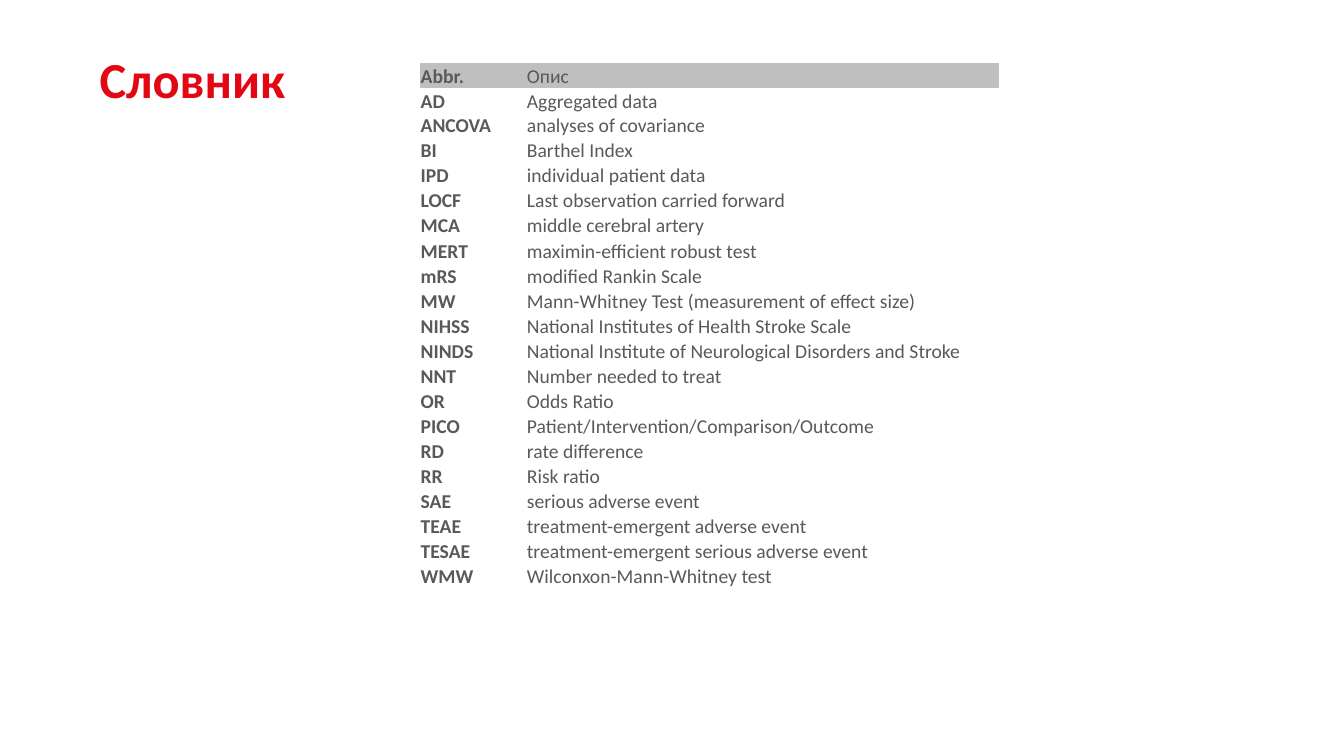
from pptx import Presentation
from pptx.dml.color import RGBColor
from pptx.enum.text import MSO_ANCHOR
from pptx.oxml.ns import qn
from pptx.util import Pt

MIDDLE, BOTTOM = MSO_ANCHOR.MIDDLE, MSO_ANCHOR.BOTTOM
COLORS = {"heading": "E30613", "body": "595959", "header": "BFBFBF"}
FONT = "Calibri"
PLAIN_STYLE = "{2D5ABB26-0587-4C30-8999-92F81FD0307C}"
ABBREVIATION_WIDTH = 75.9
ROW_HEIGHT, TALL_ROW_HEIGHT, TALL_ROW = 17.85, 18.7, "MERT"

GLOSSARY = [
    ("Abbr.", "Опис"),
    ("AD", "Aggregated data"),
    ("ANCOVA", "analyses of covariance"),
    ("BI", "Barthel Index"),
    ("IPD", "individual patient data"),
    ("LOCF", "Last observation carried forward"),
    ("MCA", "middle cerebral artery"),
    ("MERT", "maximin-efficient robust test"),
    ("mRS", "modified Rankin Scale"),
    ("MW", "Mann-Whitney Test (measurement of effect size)"),
    ("NIHSS", "National Institutes of Health Stroke Scale"),
    ("NINDS", "National Institute of Neurological Disorders and Stroke"),
    ("NNT", "Number needed to treat"),
    ("OR", "Odds Ratio"),
    ("PICO", "Patient/Intervention/Comparison/Outcome"),
    ("RD", "rate difference"),
    ("RR", "Risk ratio"),
    ("SAE", "serious adverse event"),
    ("TEAE", "treatment-emergent adverse event"),
    ("TESAE", "treatment-emergent serious adverse event"),
    ("WMW", "Wilconxon-Mann-Whitney test"),
]


def write(frame, text, size, color, bold):
    """Put one line of styled text into a text frame."""
    frame.word_wrap = True
    paragraph = frame.paragraphs[0]
    paragraph.text = text
    font = paragraph.font
    font.name, font.size, font.bold = FONT, Pt(size), bold
    font.color.rgb = RGBColor.from_string(COLORS[color])


def add_heading(slide, left, top, width, height):
    """Add the slide heading, centred vertically in its box."""
    heading = slide.shapes.add_textbox(Pt(left), Pt(top), Pt(width), Pt(height))
    heading.text_frame.vertical_anchor = MIDDLE
    write(heading.text_frame, "Словник", 36, "heading", True)


def fill_entry(cell, text, is_header, bold):
    """Style one glossary cell and write its text."""
    cell.margin_left = cell.margin_top = cell.margin_right = Pt(0.7)
    cell.margin_bottom = Pt(0)
    cell.vertical_anchor = BOTTOM
    if is_header:
        cell.fill.solid()
        cell.fill.fore_color.rgb = RGBColor.from_string(COLORS["header"])
    else:
        cell.fill.background()
    write(cell.text_frame, text, 14, "body", bold)


def add_glossary(slide, left, top, width, height):
    """Add the two-column table of abbreviations."""
    glossary = slide.shapes.add_table(
        len(GLOSSARY), 2, Pt(left), Pt(top), Pt(width), Pt(height)).table
    glossary.first_row = glossary.horz_banding = False
    glossary._tbl.tblPr.find(qn("a:tableStyleId")).text = PLAIN_STYLE
    glossary.columns[0].width = Pt(ABBREVIATION_WIDTH)
    glossary.columns[1].width = Pt(width - ABBREVIATION_WIDTH)
    for row, entry in enumerate(GLOSSARY):
        is_tall = entry[0] == TALL_ROW
        glossary.rows[row].height = Pt(TALL_ROW_HEIGHT if is_tall else ROW_HEIGHT)
        for column, text in enumerate(entry):
            fill_entry(glossary.cell(row, column), text, row == 0, column == 0)


def main():
    """Build and save the glossary slide."""
    deck = Presentation()
    deck.slide_width, deck.slide_height = Pt(960), Pt(540)
    slide = deck.slides.add_slide(deck.slide_layouts[6])
    add_heading(slide, 64, 10.8, 854, 90)
    add_glossary(slide, 299.8, 45.2, 414, 375.7)
    deck.save("out.pptx")


if __name__ == "__main__":
    main()
